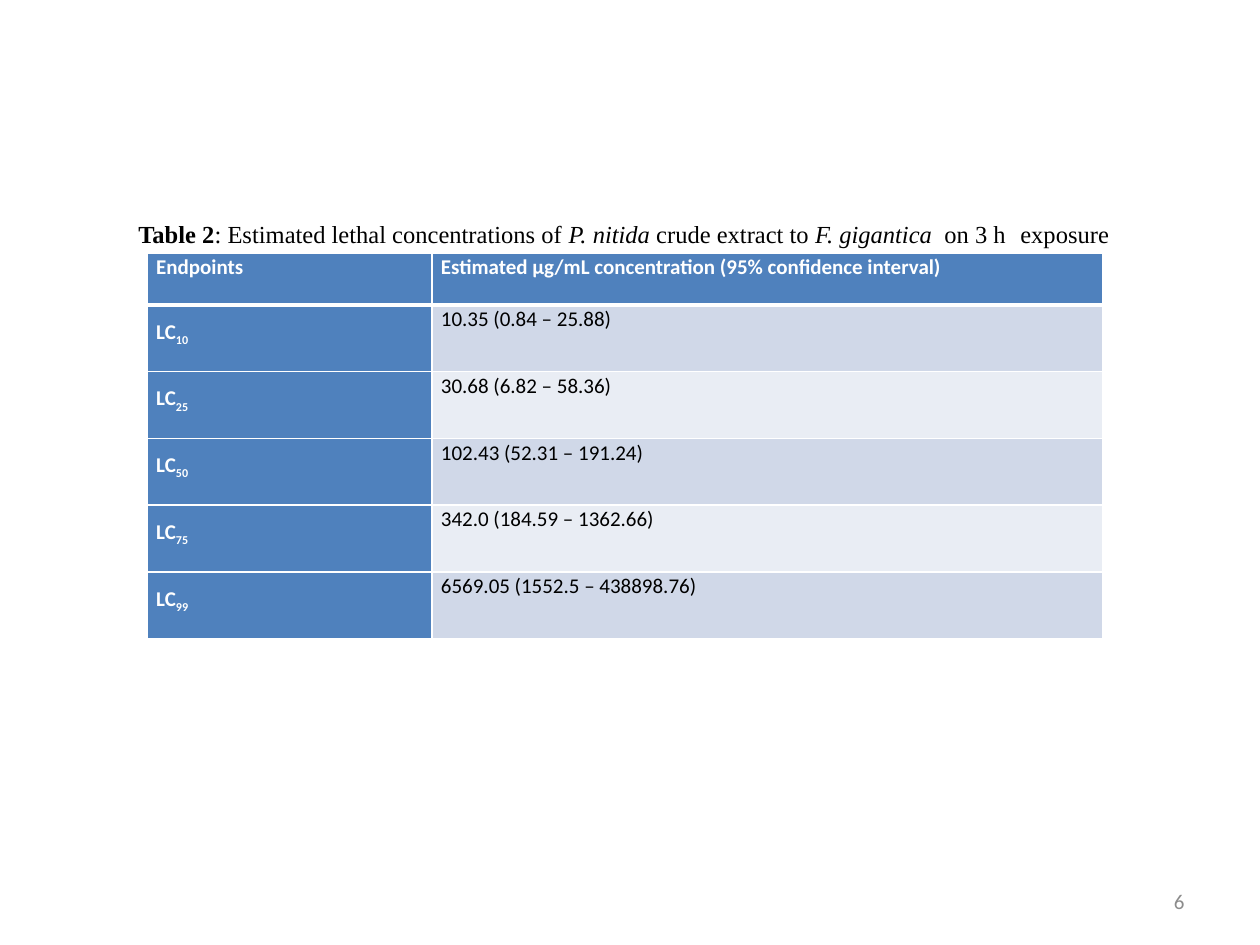
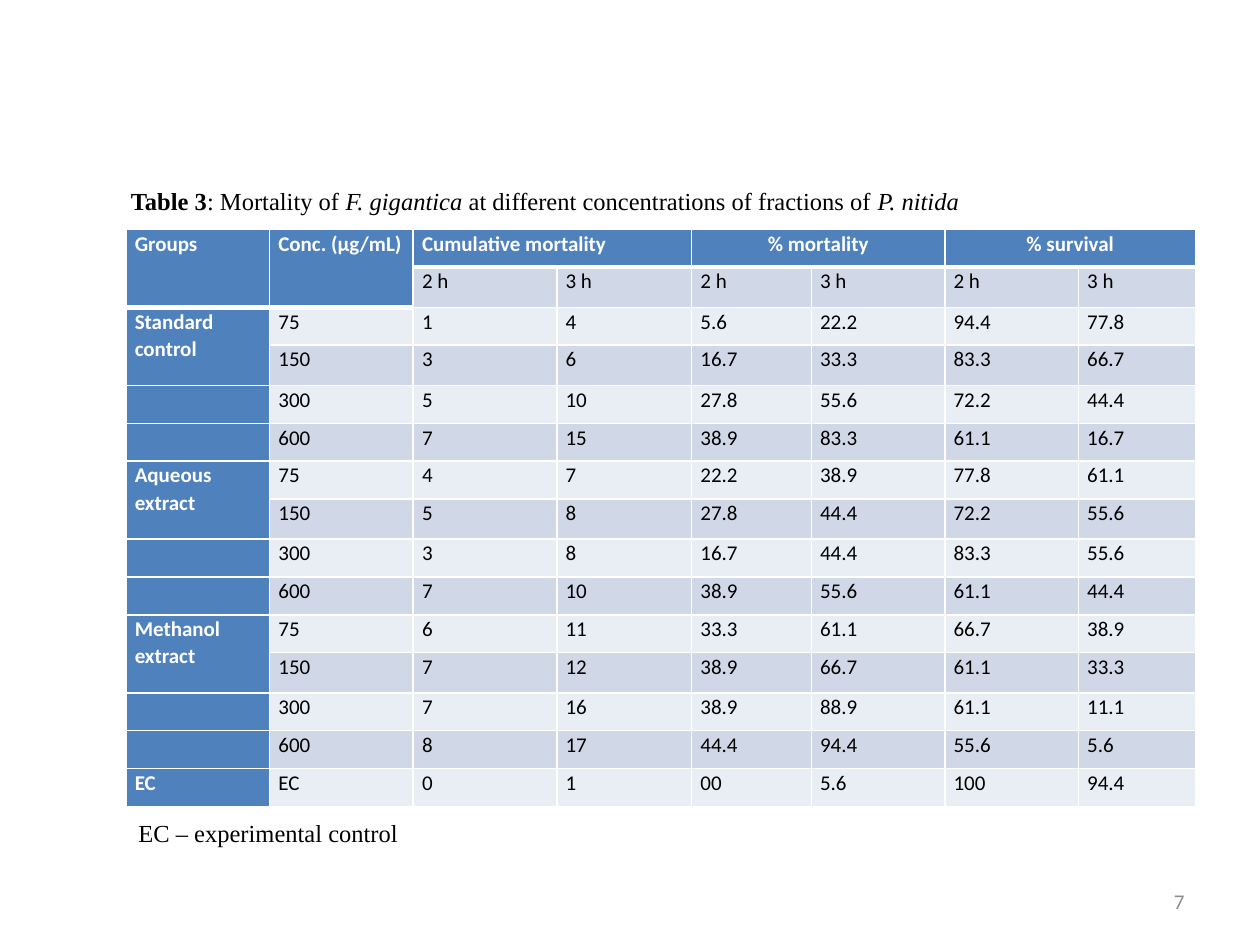
"""Build two slides of lethal concentration and mortality tables."""
from lxml import etree
from pptx import Presentation
from pptx import util as u
from pptx.dml.color import RGBColor
from pptx.enum import text
from pptx.oxml.ns import qn

COLORS = {"head": "4F81BD", "dark": "D0D8E8", "light": "E9EDF4",
          "white": "FFFFFF", "black": "000000", "number": "8C8C8C"}
BODY, SERIF = "Calibri", "Times New Roman"
ALIGN = text.PP_ALIGN
SPACING = 1.07

LETHAL_ROWS = [["Endpoints", "Estimated µg/mL concentration (95% confidence interval)"]] + [
    [[("LC", ""), (level, "sub")], value] for level, value in [
        ("10", "10.35 (0.84 – 25.88)"),
        ("25", "30.68 (6.82 – 58.36)"),
        ("50", "102.43 (52.31 – 191.24)"),
        ("75", "342.0 (184.59 – 1362.66)"),
        ("99", "6569.05 (1552.5 – 438898.76)"),
    ]]

MORTALITY_ROWS = [
    ["Groups", "Conc. (µg/mL)", "Cumulative mortality", "", "% mortality", "", "% survival", ""],
    ["", ""] + ["2 h", "3 h"] * 3,
    ["Standard control", "75", "1", "4", "5.6", "22.2", "94.4", "77.8"],
    ["", "150", "3", "6", "16.7", "33.3", "83.3", "66.7"],
    ["", "300", "5", "10", "27.8", "55.6", "72.2", "44.4"],
    ["", "600", "7", "15", "38.9", "83.3", "61.1", "16.7"],
    ["Aqueous extract", "75", "4", "7", "22.2", "38.9", "77.8", "61.1"],
    ["", "150", "5", "8", "27.8", "44.4", "72.2", "55.6"],
    ["", "300", "3", "8", "16.7", "44.4", "83.3", "55.6"],
    ["", "600", "7", "10", "38.9", "55.6", "61.1", "44.4"],
    ["Methanol extract", "75", "6", "11", "33.3", "61.1", "66.7", "38.9"],
    ["", "150", "7", "12", "38.9", "66.7", "61.1", "33.3"],
    ["", "300", "7", "16", "38.9", "88.9", "61.1", "11.1"],
    ["", "600", "8", "17", "44.4", "94.4", "55.6", "5.6"],
    ["EC", "EC", "0", "1", "00", "5.6", "100", "94.4"],
]

SLIDES = [
    {"number": "6",
     "captions": [
         ((1, 1.67, 8.2, 0.34), ALIGN.LEFT, [
             ("Table 2", "bold"), (": Estimated lethal concentrations of ", ""),
             ("P. nitida", "italic"), (" crude extract to ", ""),
             ("F. gigantica", "italic"), ("  on 3 h \texposure", "")])],
     "table": {"at": (1.17, 2.01), "rows": LETHAL_ROWS, "columns": [2.26, 5.32],
               "heights": [0.41] + [0.53] * 5, "head_depth": [1, 1],
               "merges": [], "centred": []}},
    {"number": "7",
     "captions": [
         ((0.94, 1.41, 7.14, 0.34), ALIGN.JUSTIFY, [
             ("Table 3", "bold"), (": Mortality of ", ""), ("F. gigantica", "italic"),
             (" at different concentrations of fractions of ", ""), ("P. nitida", "italic")]),
         ((1, 6.43, 6.67, 0.34), ALIGN.LEFT, [("EC – experimental control", "")])],
     "table": {"at": (1, 1.82), "rows": MORTALITY_ROWS,
               "columns": [1.14, 1.14, 1.14, 1.07, 0.95, 1.06, 1.06, 0.93],
               "heights": [0.3] + [0.32, 0.3] * 2 + ([0.3, 0.3, 0.32, 0.3]) * 2 + [0.3, 0.3],
               "head_depth": [2, 2] + [1] * 6,
               "merges": [(0, 0, 1, 0), (0, 1, 1, 1)]
               + [(0, column, 0, column + 1) for column in (2, 4, 6)]
               + [(row, 0, row + 1, 0) for row in (2, 6, 10)],
               "centred": ["% mortality", "% survival"]}},
]


def add_runs(paragraph, runs, font_name, size, color, bold=False):
    for words, style in runs:
        run = paragraph.add_run()
        run.text = words
        font = run.font
        font.name, font.size = font_name, u.Pt(size)
        font.bold = bold or style == "bold"
        font.italic = style == "italic"
        font.color.rgb = RGBColor.from_string(COLORS[color])
        if style == "sub":
            font._element.set("baseline", "-25000")


def add_text(slide, box, runs, align, font_name, size, color):
    shape = slide.shapes.add_textbox(*map(u.Inches, box))
    shape.text_frame.word_wrap = True
    paragraph = shape.text_frame.paragraphs[0]
    paragraph.alignment = align
    add_runs(paragraph, runs, font_name, size, color)
    return shape.text_frame


def add_caption(slide, box, align, runs):
    frame = add_text(slide, box, runs, align, SERIF, 14, "black")
    frame.auto_size = text.MSO_AUTO_SIZE.SHAPE_TO_FIT_TEXT
    frame.paragraphs[0].line_spacing = SPACING
    frame.paragraphs[0].space_after = u.Pt(8)


def add_number(slide, number):
    frame = add_text(slide, (7.17, 6.95, 2.33, 0.4), [(number, "")],
                     ALIGN.RIGHT, BODY, 12, "number")
    frame.vertical_anchor = text.MSO_ANCHOR.MIDDLE


def set_borders(cell, widths):
    properties = cell._tc.get_or_add_tcPr()
    for side, width in widths.items():
        line = etree.SubElement(properties, qn(f"a:ln{side}"), w=str(u.Pt(width)))
        fill = etree.SubElement(line, qn("a:solidFill"))
        etree.SubElement(fill, qn("a:srgbClr"), val=COLORS["white"])


def fill_cell(cell, content, row, column, depth, align):
    is_head = row < depth or column == 0
    set_borders(cell, {"L": 1, "R": 1, "T": 3 if row == depth else 1,
                       "B": 3 if row < depth else 1})
    cell.fill.solid()
    fill = "head" if is_head else ("light", "dark")[row % 2]
    cell.fill.fore_color.rgb = RGBColor.from_string(COLORS[fill])
    cell.margin_left = cell.margin_right = u.Inches(0.07)
    cell.margin_top = cell.margin_bottom = 0
    paragraph = cell.text_frame.paragraphs[0]
    paragraph.alignment = align
    if not content:
        etree.SubElement(paragraph._p, qn("a:endParaRPr"), sz="1200")
        return
    is_plain = isinstance(content, str)
    paragraph.line_spacing = SPACING if is_plain else 1.5
    runs = [(content, "")] if is_plain else content
    add_runs(paragraph, runs, BODY, 12, "white" if is_head else "black", is_head)


def add_data_table(slide, at, rows, columns, heights, head_depth, merges, centred):
    size = (sum(columns), sum(heights))
    frame = slide.shapes.add_table(len(rows), len(columns), *map(u.Inches, at + size))
    table = frame.table
    table.first_row = table.horz_banding = False
    for column, width in zip(table.columns, columns):
        column.width = u.Inches(width)
    for row, height in zip(table.rows, heights):
        row.height = u.Inches(height)
    for row, contents in enumerate(rows):
        for column, content in enumerate(contents):
            align = ALIGN.CENTER if content in centred else ALIGN.LEFT
            fill_cell(table.cell(row, column), content, row, column,
                      head_depth[column], align)
    for top, left, bottom, right in merges:
        table.cell(top, left).merge(table.cell(bottom, right))


def main():
    presentation = Presentation()
    presentation.slide_width, presentation.slide_height = u.Inches(10), u.Inches(7.5)
    for content in SLIDES:
        slide = presentation.slides.add_slide(presentation.slide_layouts[6])
        add_number(slide, content["number"])
        for caption in content["captions"]:
            add_caption(slide, *caption)
        add_data_table(slide, **content["table"])
    presentation.save("out.pptx")


if __name__ == "__main__":
    main()
